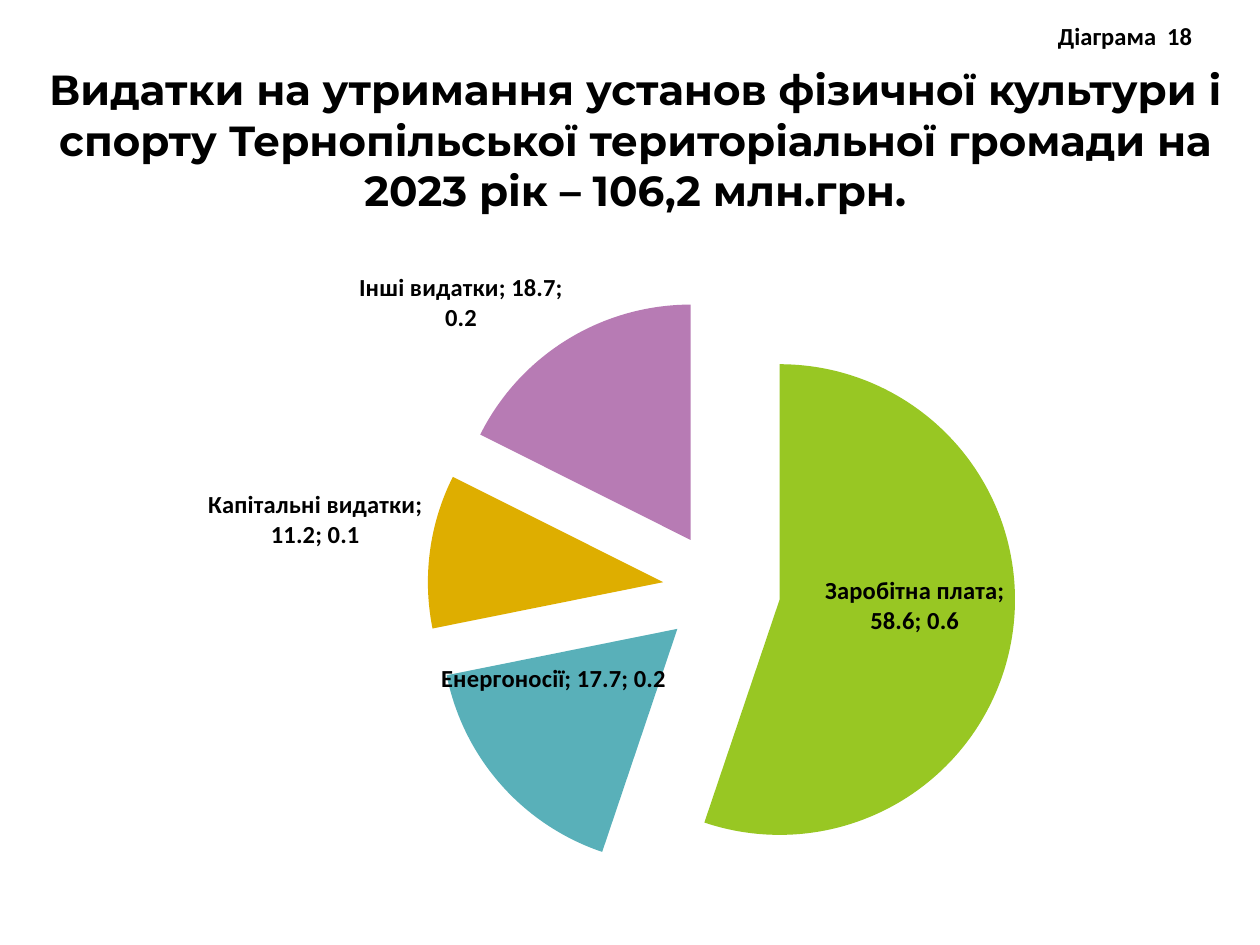
from copy import deepcopy

from lxml import etree
from pptx import Presentation
from pptx.chart.data import CategoryChartData
from pptx.dml.color import RGBColor
from pptx.enum.chart import XL_CHART_TYPE, XL_LABEL_POSITION
from pptx.enum.text import MSO_ANCHOR, PP_ALIGN
from pptx.oxml.ns import qn
from pptx.util import Pt

PIE = XL_CHART_TYPE.PIE
OUTSIDE_END = XL_LABEL_POSITION.OUTSIDE_END
CENTER, RIGHT = PP_ALIGN.CENTER, PP_ALIGN.RIGHT
MIDDLE, TOP = MSO_ANCHOR.MIDDLE, MSO_ANCHOR.TOP

BLACK = RGBColor(0x00, 0x00, 0x00)
GREEN = RGBColor(0x98, 0xC7, 0x23)
TEAL = RGBColor(0x59, 0xB0, 0xB9)
AMBER = RGBColor(0xDE, 0xAE, 0x00)
PURPLE = RGBColor(0xB7, 0x7B, 0xB4)

# category, amount, colour, label position, label shift (fractions of the chart)
EXPENSES = [
    ("Заробітна плата", 58.6, GREEN, "inEnd", None),
    ("Енергоносії", 17.7, TEAL, "ctr", (-0.03, -0.04)),
    ("Капітальні видатки", 11.2, AMBER, "outEnd", None),
    ("Інші видатки", 18.7, PURPLE, "outEnd", None),
]
EXPLOSION = 25
PIE_AREA = {"x": 0.34, "y": 0.09, "w": 0.5, "h": 0.86}


def set_font(font, name, size):
    font.name = name
    font.size = Pt(size)
    font.bold = True
    font.color.rgb = BLACK


def write_text(shape, text, font_name, size, alignment, anchor):
    frame = shape.text_frame
    frame.word_wrap = True
    frame.vertical_anchor = anchor
    paragraph = frame.paragraphs[0]
    paragraph.alignment = alignment
    run = paragraph.add_run()
    run.text = text
    set_font(run.font, font_name, size)


def add_title(slide, text):
    title = slide.shapes.title
    title.left, title.top, title.width, title.height = Pt(20), Pt(32.4), Pt(686), Pt(94.3)
    write_text(title, text, "Montserrat", 24, CENTER, MIDDLE)


def add_diagram_number(slide, text):
    box = slide.shapes.add_textbox(Pt(530), Pt(8.6), Pt(158.4), Pt(24.5))
    write_text(box, text, "Calibri", 14, RIGHT, TOP)


def chart_element(tag, value=None):
    element = etree.Element(qn("c:" + tag))
    if value is not None:
        element.set("val", str(value))
    return element


def manual_layout(**settings):
    layout = chart_element("layout")
    manual = etree.SubElement(layout, qn("c:manualLayout"))
    for tag, value in settings.items():
        manual.append(chart_element(tag, value))
    return layout


def place_pie(chart):
    plot_area = chart.plots[0]._element.getparent()
    for old_layout in plot_area.findall(qn("c:layout")):
        plot_area.remove(old_layout)
    plot_area.insert(0, manual_layout(
        layoutTarget="inner", xMode="edge", yMode="edge", **PIE_AREA))


def format_labels(series):
    """Show category, value and share, then give each slice its own label position."""
    labels = series.data_labels
    labels.show_category_name = True
    labels.show_value = True
    labels.show_percentage = True
    labels.number_format = "0.0"
    labels.number_format_is_linked = False
    labels.position = OUTSIDE_END
    set_font(labels.font, "Calibri", 14)

    shared = labels._element
    separator = chart_element("separator")
    separator.text = "; "
    shared.find(qn("c:showBubbleSize")).addnext(separator)
    settings = [child for child in shared if child.tag != qn("c:showLeaderLines")]

    for index, (_, _, _, position, shift) in enumerate(EXPENSES):
        label = chart_element("dLbl")
        label.append(chart_element("idx", index))
        if shift:
            label.append(manual_layout(x=shift[0], y=shift[1]))
        label.extend(deepcopy(settings))
        label.find(qn("c:dLblPos")).set("val", position)
        shared.insert(index, label)


def add_expense_pie(slide):
    data = CategoryChartData(number_format="0.0")
    data.categories = [expense[0] for expense in EXPENSES]
    data.add_series("Series 1", [expense[1] for expense in EXPENSES])
    chart = slide.shapes.add_chart(
        PIE, Pt(14.4), Pt(133.9), Pt(674.6), Pt(391), data).chart
    chart.has_legend = False
    chart.has_title = False
    chart.font.name = "Calibri"
    chart.font.size = Pt(10)
    chart.font.color.rgb = BLACK
    chart.plots[0].vary_by_categories = True
    place_pie(chart)

    series = chart.plots[0].series[0]
    series._element.find(qn("c:tx")).addnext(chart_element("explosion", EXPLOSION))
    for index, expense in enumerate(EXPENSES):
        fill = series.points[index].format.fill
        fill.solid()
        fill.fore_color.rgb = expense[2]
    format_labels(series)


def main():
    presentation = Presentation()
    presentation.slide_width, presentation.slide_height = Pt(720), Pt(540)
    slide = presentation.slides.add_slide(presentation.slide_layouts.get_by_name("Title Only"))
    add_diagram_number(slide, "Діаграма  18")
    add_title(slide, "Видатки на утримання установ фізичної культури і спорту "
                     "Тернопільської територіальної громади на 2023 рік – 106,2 млн.грн.")
    add_expense_pie(slide)
    presentation.save("out.pptx")


if __name__ == "__main__":
    main()
